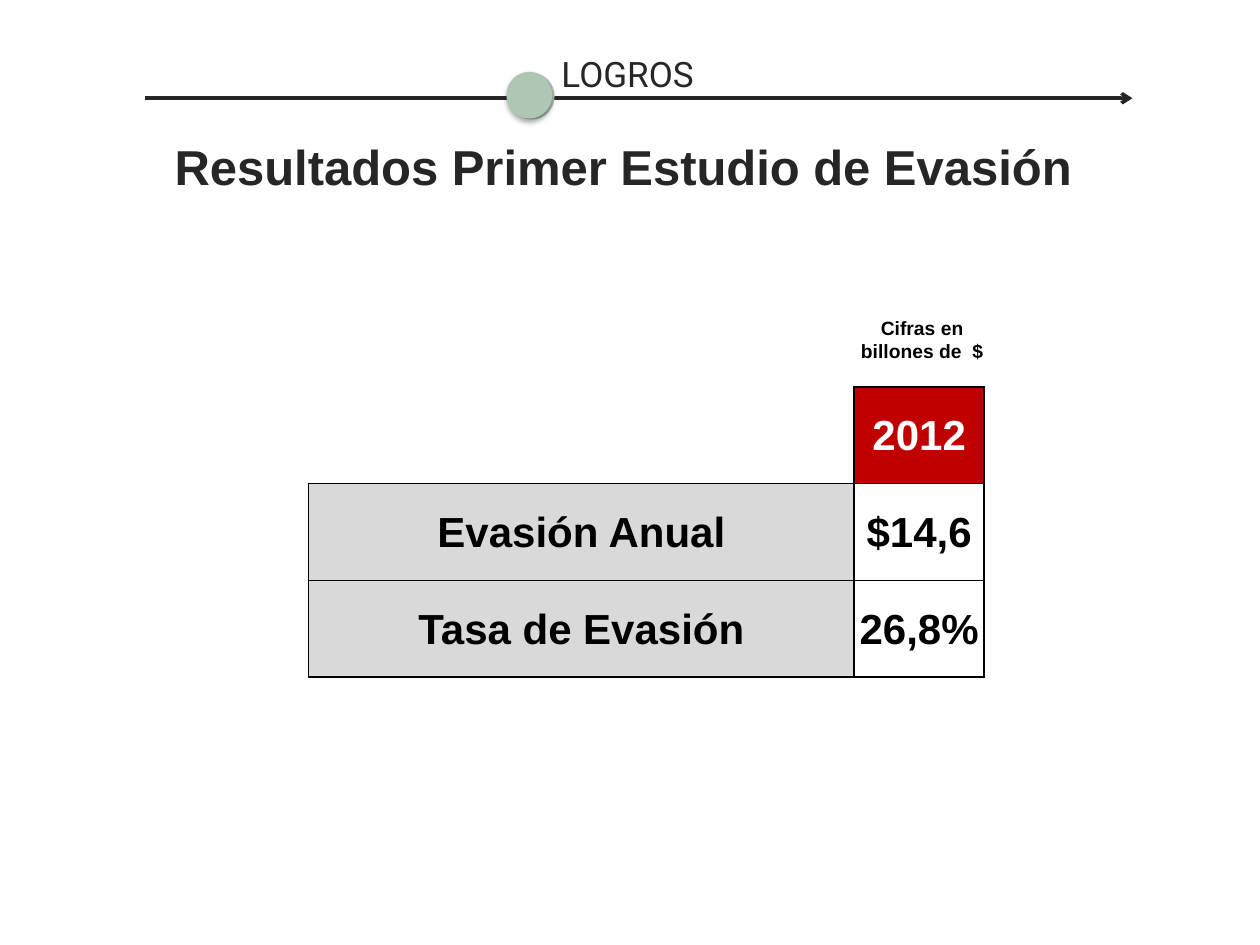
import dataclasses

import lxml.etree
import pptx
import pptx.dml.color
import pptx.enum.shapes
import pptx.enum.text
import pptx.oxml
import pptx.oxml.ns
import pptx.util

Cm = pptx.util.Cm
Pt = pptx.util.Pt
ALIGN = pptx.enum.text.PP_ALIGN
ANCHOR = pptx.enum.text.MSO_ANCHOR
NAMESPACE = pptx.oxml.ns.nsdecls("a")


@dataclasses.dataclass(frozen=True)
class Theme:
    ink: str = "262626"
    black: str = "000000"
    white: str = "FFFFFF"
    sage: str = "AFC6B4"
    red: str = "C00000"
    grey: str = "D9D9D9"
    heading_font: str = "Roboto"
    body_font: str = "Arial"
    title_size: float = 28
    table_size: float = 24
    label_size: float = 20
    note_size: float = 11


def color(value):
    return pptx.dml.color.RGBColor.from_string(value)


def write_text(text_frame, text, *, size, ink, font, bold=True, align=ALIGN.CENTER):
    paragraph = text_frame.paragraphs[0]
    paragraph.alignment = align
    run = paragraph.add_run()
    run.text = text
    run.font.size = Pt(size)
    run.font.name = font
    run.font.bold = bold
    run.font.color.rgb = color(ink)


def set_border(cell, sides, ink):
    """Draw the named sides (from "LRTB") and hide the others."""
    properties = cell._tc.get_or_add_tcPr()
    for side in "LRTB":
        paint = f'<a:solidFill><a:srgbClr val="{ink}"/></a:solidFill>' if side in sides else "<a:noFill/>"
        properties.append(pptx.oxml.parse_xml(
            f'<a:ln{side} {NAMESPACE} w="{Pt(1)}">{paint}</a:ln{side}>'))


class SlideBuilder:
    def __init__(self, slide, theme):
        self.slide = slide
        self.theme = theme

    def title(self, text, left, top, width, height):
        shape = self.slide.shapes.title
        shape.left, shape.top, shape.width, shape.height = map(Cm, (left, top, width, height))
        shape.text_frame.auto_size = pptx.enum.text.MSO_AUTO_SIZE.NONE
        shape.text_frame.vertical_anchor = ANCHOR.MIDDLE
        write_text(shape.text_frame, text, size=self.theme.title_size,
                   ink=self.theme.ink, font=self.theme.body_font)

    def text(self, text, left, top, width, height, **text_format):
        shape = self.slide.shapes.add_textbox(*map(Cm, (left, top, width, height)))
        shape.text_frame.word_wrap = True
        write_text(shape.text_frame, text, **text_format)

    def arrow(self, start_x, end_x, y):
        connector = self.slide.shapes.add_connector(
            pptx.enum.shapes.MSO_CONNECTOR.STRAIGHT, Cm(start_x), Cm(y), Cm(end_x), Cm(y))
        connector.line.width = Pt(2)
        connector.line.color.rgb = color(self.theme.ink)
        tail = lxml.etree.SubElement(connector.line._get_or_add_ln(), pptx.oxml.ns.qn("a:tailEnd"))
        tail.set("type", "arrow")
        lxml.etree.SubElement(connector._element.spPr, pptx.oxml.ns.qn("a:effectLst"))

    def dot(self, left, top, shadow=False):
        shape = self.slide.shapes.add_shape(
            pptx.enum.shapes.MSO_SHAPE.OVAL, *map(Cm, (left, top, 0.92, 0.94)))
        shape.fill.solid()
        shape.fill.fore_color.rgb = color(self.theme.sage)
        shape.line.fill.background()
        shape.shadow.inherit = False
        if shadow:
            effects = shape._element.spPr.find(pptx.oxml.ns.qn("a:effectLst"))
            effects.append(pptx.oxml.parse_xml(
                f'<a:outerShdw {NAMESPACE} blurRad="{Pt(3.1)}" dist="{Pt(1.8)}" dir="5400000" '
                f'rotWithShape="0"><a:srgbClr val="{self.theme.black}">'
                '<a:alpha val="35000"/></a:srgbClr></a:outerShdw>'))

    def table(self, rows, left, top, column_widths, row_height):
        """Build a table whose first row and first column are headers."""
        table = self.slide.shapes.add_table(
            len(rows), len(column_widths), Cm(left), Cm(top),
            Cm(sum(column_widths)), Cm(row_height * len(rows))).table
        table.first_row = table.horz_banding = False
        for column, width in zip(table.columns, column_widths):
            column.width = Cm(width)
        for row_index, row in enumerate(rows):
            table.rows[row_index].height = Cm(row_height)
            for column_index, text in enumerate(row):
                self.cell(table.cell(row_index, column_index), text,
                          top_row=row_index == 0, first_column=column_index == 0)

    def cell(self, cell, text, top_row, first_column):
        theme = self.theme
        set_border(cell, "LRTB" if text else "RB", theme.black)
        if not text:
            cell.fill.background()
            return
        cell.fill.solid()
        cell.fill.fore_color.rgb = color(
            theme.red if top_row else theme.grey if first_column else theme.white)
        cell.margin_left = cell.margin_right = cell.margin_top = Cm(0.03)
        cell.margin_bottom = 0
        cell.vertical_anchor = ANCHOR.MIDDLE
        write_text(cell.text_frame, text, size=theme.table_size, font=theme.body_font,
                   ink=theme.white if top_row else theme.black)


def main():
    presentation = pptx.Presentation()
    presentation.slide_width, presentation.slide_height = Cm(25.4), Cm(19.05)
    theme = Theme()
    slide = presentation.slides.add_slide(presentation.slide_layouts[5])
    builder = SlideBuilder(slide, theme)

    builder.arrow(2.92, 22.83, 1.98)
    builder.dot(10.26, 1.47)
    builder.text("LOGROS", 11.07, 0.94, 3.7, 1.09, size=theme.label_size, ink=theme.ink,
                 font=theme.heading_font, bold=False, align=ALIGN.LEFT)
    builder.title("Resultados Primer Estudio de Evasión ", 0, 2.65, 25.4, 1.4)
    builder.table([("", "2012"), ("Evasión Anual", "$14,6"), ("Tasa de Evasión", "26,8%")],
                  left=6.22, top=7.8, column_widths=(11, 2.62), row_height=1.95)
    builder.text("Cifras en billones de  $", 16.9, 6.25, 3.38, 1.2, size=theme.note_size,
                 ink=theme.black, font=theme.body_font)
    builder.dot(10.21, 1.45, shadow=True)

    presentation.save("out.pptx")


if __name__ == "__main__":
    main()
